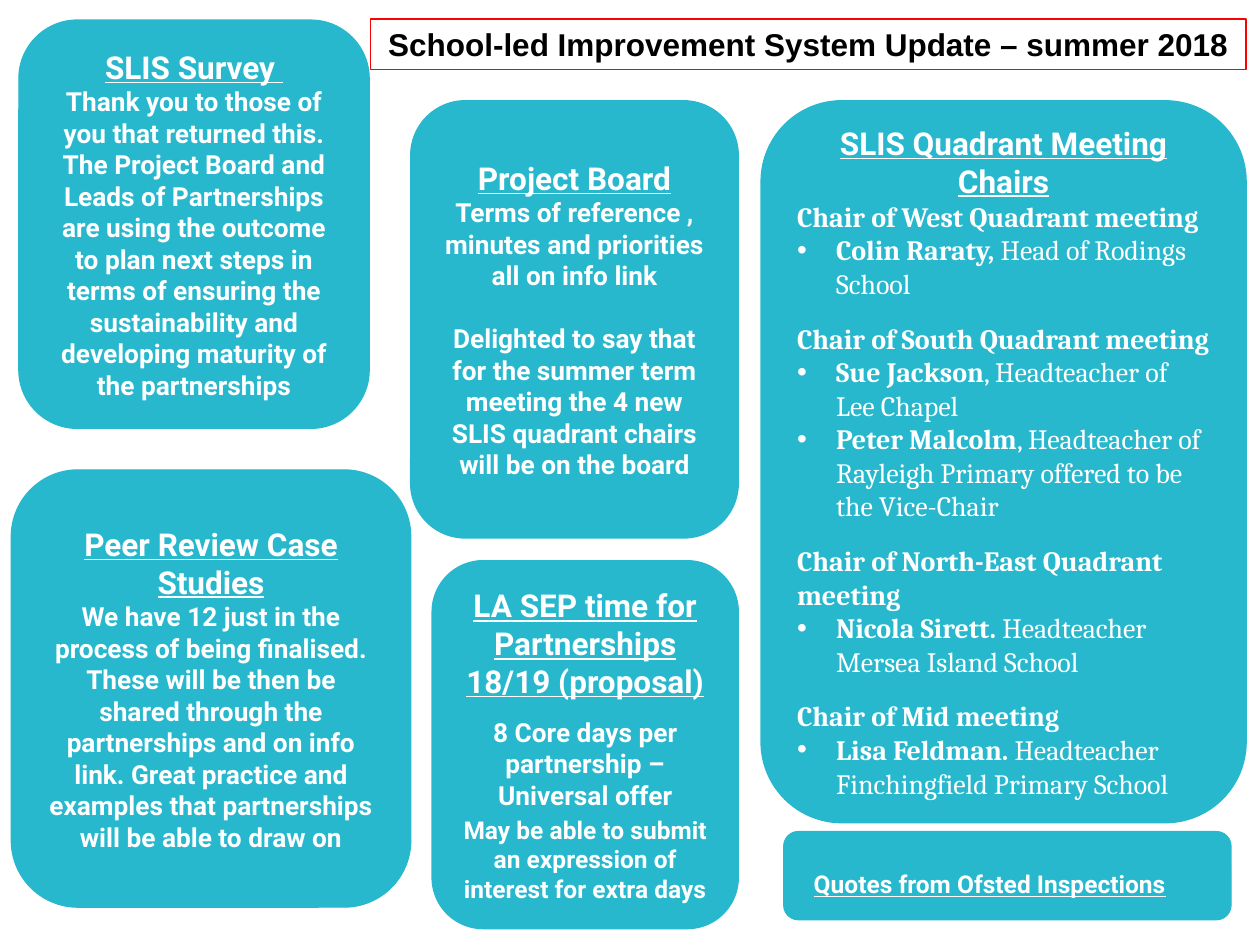
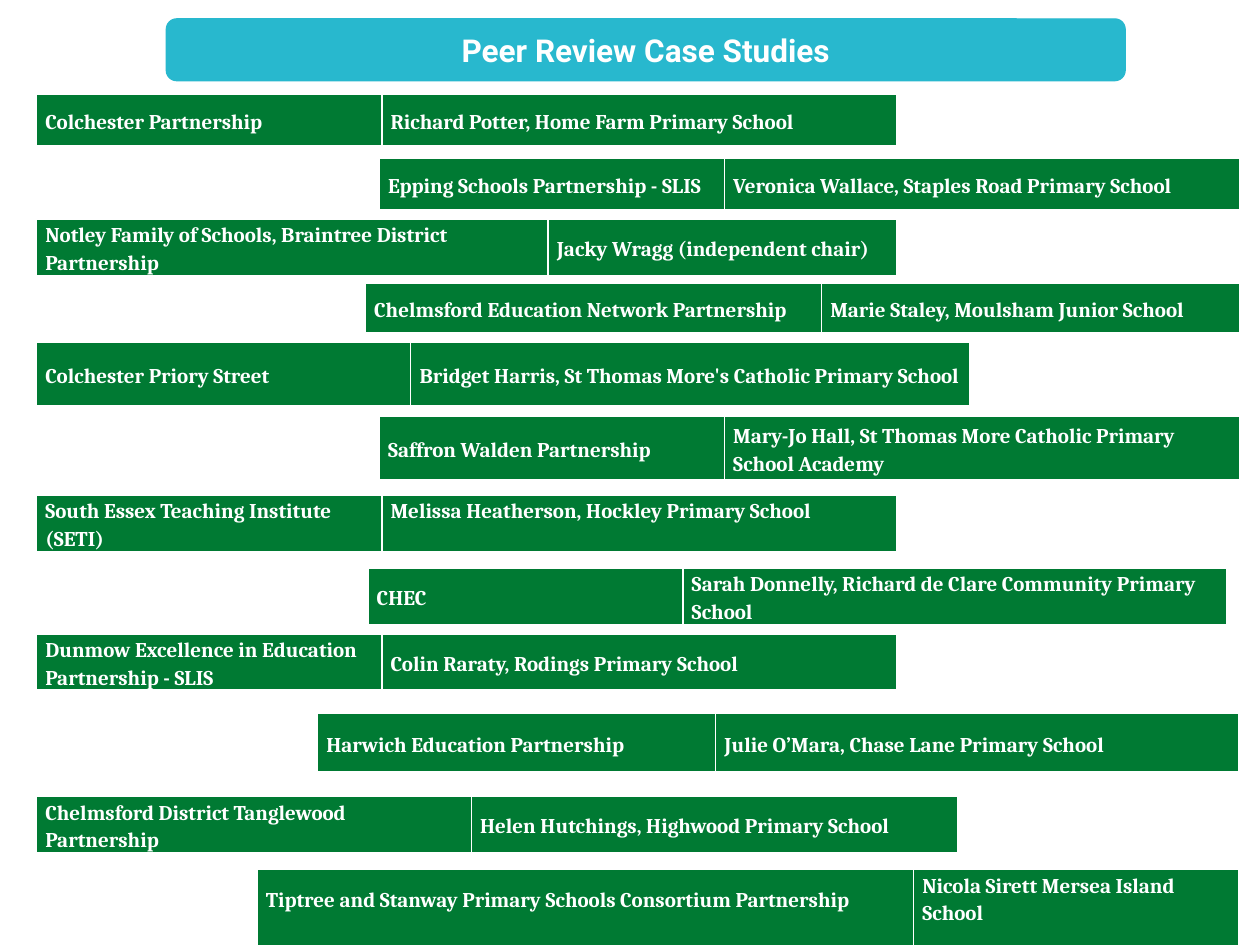
import dataclasses

import lxml.etree
import pptx
import pptx.dml.color
import pptx.enum.shapes
import pptx.enum.text
import pptx.oxml.ns
import pptx.util

Inches, Pt = pptx.util.Inches, pptx.util.Pt
RGB = pptx.dml.color.RGBColor.from_string
ALIGN, ANCHOR = pptx.enum.text.PP_ALIGN, pptx.enum.text.MSO_ANCHOR
qn = pptx.oxml.ns.qn


@dataclasses.dataclass(frozen=True)
class Theme:
    teal: str = "28B8CE"
    green: str = "007A33"
    red: str = "FF0000"
    black: str = "000000"
    white: str = "FFFFFF"
    sans: str = "Roboto"
    serif: str = "Cambria"
    plain: str = "Arial"
    head: int = 18
    chair: int = 16
    body: int = 15
    small: int = 14
    cell: int = 12


theme = Theme()


def ink(para, face, size, color=theme.white, under=False):
    """Format every run of a paragraph in bold."""
    for run in para.runs:
        font = run.font
        font.name, font.size, font.bold = face, Pt(size), True
        font.underline = under
        font.color.rgb = RGB(color)


def panel(slide, place):
    """Add a teal rounded panel."""
    kind = pptx.enum.shapes.MSO_SHAPE.ROUNDED_RECTANGLE
    shape = slide.shapes.add_shape(kind, *map(Inches, place))
    shape.shadow.inherit = False
    shape.fill.solid()
    shape.fill.fore_color.rgb = RGB(theme.teal)
    shape.line.color.rgb = RGB(theme.teal)
    shape.line.width = Pt(0.75)
    shape.text_frame.vertical_anchor = ANCHOR.MIDDLE
    return shape


deck = pptx.Presentation()
deck.slide_width, deck.slide_height = Inches(10), Inches(7.5)
layout = deck.slide_layouts.get_by_name("Title Only")

# Both slides: title
heads = [
    ("School-led Improvement System Update – summer 2018",
     (2.94, 0.15, 6.95, 0.4), theme.plain, theme.black),
    ("Peer Review Case Studies",
     (1.32, 0.15, 7.61, 0.49), theme.sans, theme.white),
]
slides = []
for text, place, face, color in heads:
    slide = deck.slides.add_slide(layout)
    title = slide.shapes.title
    title.left, title.top, title.width, title.height = map(Inches, place)
    frame = title.text_frame
    frame.text = text
    frame.auto_size = pptx.enum.text.MSO_AUTO_SIZE.NONE
    frame.vertical_anchor = ANCHOR.MIDDLE
    frame.paragraphs[0].alignment = ALIGN.CENTER
    ink(frame.paragraphs[0], face, theme.head, color)
    slides.append(slide)
news, cases = slides
news.shapes.title.line.color.rgb = RGB(theme.red)
news.shapes.title.line.width = Pt(0.75)
band = panel(cases, heads[1][1])
cases.shapes.title.element.addprevious(band.element)

# Update slide: panels, each with a heading and (text, size, gap) notes
notes = [
    ((0.15, 0.16, 2.78, 3.24), "SLIS Survey ", [
        ("Thank you to those of you that returned this. The Project Board and "
         "Leads of Partnerships are using the outcome to plan next steps in "
         "terms of ensuring the sustainability and developing maturity of the "
         "partnerships", theme.body, 0)]),
    ((3.26, 0.8, 2.6, 3.47), "Project Board", [
        ("Terms of reference , minutes and priorities all on info link",
         theme.body, 0),
        ("Delighted to say that for the summer term meeting the 4 new SLIS "
         "quadrant chairs will be on the board", theme.body, 18)]),
    ((0.09, 3.73, 3.17, 3.47), "Peer Review Case Studies", [
        ("We have 12 just in the process of being finalised. These will be "
         "then be shared through the partnerships and on info link. Great "
         "practice and examples that partnerships will be able to draw on",
         theme.body, 0)]),
    ((3.43, 4.45, 2.43, 2.92), "LA SEP time for Partnerships 18/19 (proposal)", [
        ("8 Core days per partnership –Universal offer", theme.body, 9.4),
        ("May be able to submit an expression of interest for extra days",
         theme.small, 2.4)]),
    ((6.04, 0.8, 3.85, 5.73), "SLIS Quadrant Meeting Chairs", []),
]
for place, head, lines in notes:
    frame = panel(news, place).text_frame
    frame.text = head
    frame.paragraphs[0].alignment = ALIGN.CENTER
    ink(frame.paragraphs[0], theme.sans, theme.head, under=True)
    for text, size, gap in lines:
        para = frame.add_paragraph()
        para.text = text
        para.alignment = ALIGN.CENTER
        para.space_before = Pt(gap)
        ink(para, theme.sans, size)

# The last panel also lists the chairs of each quadrant
chairs = [
    ("West Quadrant", [("Colin Raraty, ", "Head of Rodings School")]),
    ("South Quadrant", [
        ("Sue Jackson", ", Headteacher of Lee Chapel"),
        ("Peter Malcolm",
         ", Headteacher of Rayleigh Primary offered to be the Vice-Chair")]),
    ("North-East Quadrant",
     [("Nicola Sirett. ", "Headteacher Mersea Island School")]),
    ("Mid", [("Lisa Feldman. ", "Headteacher Finchingfield Primary School")]),
]
for spot, (area, people) in enumerate(chairs):
    para = frame.add_paragraph()
    para.text = f"Chair of {area} meeting"
    para.alignment = ALIGN.LEFT
    para.space_before = Pt(12 if spot else 0)
    ink(para, theme.serif, theme.chair)
    for name, role in people:
        para = frame.add_paragraph()
        para.alignment = ALIGN.LEFT
        for text in (name, role):
            para.add_run().text = text
        ink(para, theme.serif, theme.chair)
        para.runs[1].font.bold = False
        props = para._p.get_or_add_pPr()
        props.set("marL", str(Inches(0.31)))
        props.set("indent", str(-Inches(0.31)))
        lxml.etree.SubElement(props, qn("a:buFont")).set("typeface", theme.plain)
        lxml.etree.SubElement(props, qn("a:buChar")).set("char", "•")

panel(news, (6.22, 6.6, 3.55, 0.7))
quote = news.shapes.add_textbox(*map(Inches, (6.36, 6.85, 3.28, 0.34)))
quote.text_frame.word_wrap = True
quote.text_frame.text = "Quotes from Ofsted Inspections"
ink(quote.text_frame.paragraphs[0], theme.sans, theme.small, under=True)

# Case slide: left, top, height, column widths, (partnership, lead), bottom pads
near, far = 0.29, 3.01
half = (2.74, 4.09)
level, lift = (0, 0), 0.23
rows = [
    (near, 0.75, 0.42, half,
     ("Colchester Partnership", "Richard Potter, Home Farm Primary School"), level),
    (far, 1.26, 0.42, half,
     ("Epping Schools Partnership - SLIS",
      "Veronica Wallace, Staples Road Primary School"), level),
    (near, 1.74, 0.46, (4.06, 2.77),
     ("Notley Family of Schools, Braintree District Partnership",
      "Jacky Wragg (independent chair)"), level),
    (2.9, 2.25, 0.4, (3.62, 3.32),
     ("Chelmsford Education Network Partnership",
      "Marie Staley, Moulsham Junior School"), level),
    (near, 2.72, 0.51, (2.97, 4.44),
     ("Colchester Priory Street",
      "Bridget Harris, St Thomas More's Catholic Primary School"), level),
    (far, 3.3, 0.52, half,
     ("Saffron Walden Partnership",
      "Mary-Jo Hall, St Thomas More Catholic Primary School Academy"), level),
    (near, 3.93, 0.46, half,
     ("South Essex Teaching Institute (SETI)",
      "Melissa Heatherson, Hockley Primary School"), (0, lift)),
    (2.92, 4.51, 0.46, (2.5, 4.32),
     ("CHEC", "Sarah Donnelly, Richard de Clare Community Primary School"), level),
    (near, 5.03, 0.46, half,
     ("Dunmow Excellence in Education Partnership - SLIS",
      "Colin Raraty, Rodings Primary School"), level),
    (2.52, 5.66, 0.48, (3.16, 4.15),
     ("Harwich Education Partnership",
      "Julie O’Mara, Chase Lane Primary School"), level),
    (near, 6.32, 0.46, (3.45, 3.86),
     ("Chelmsford District Tanglewood Partnership",
      "Helen Hutchings, Highwood Primary School"), level),
    (2.04, 6.9, 0.69, (5.21, 2.58),
     ("Tiptree and Stanway Primary Schools Consortium Partnership",
      "Nicola Sirett Mersea Island School"), (lift, lift)),
]
edges = {"a:lnL": 1, "a:lnR": 1, "a:lnT": 1, "a:lnB": 3}
for left, top, height, widths, names, pads in rows:
    size = map(Inches, (left, top, sum(widths), height))
    table = cases.shapes.add_table(1, 2, *size).table
    table.first_row = table.horz_banding = False
    table.rows[0].height = Inches(height)
    for col, (width, name, pad) in enumerate(zip(widths, names, pads)):
        table.columns[col].width = Inches(width)
        cell = table.cell(0, col)
        cell.text_frame.text = name
        para = cell.text_frame.paragraphs[0]
        para.line_spacing = 1.15
        ink(para, theme.serif, theme.cell)
        cell.vertical_anchor = ANCHOR.MIDDLE
        cell.margin_left = cell.margin_right = Inches(0.07)
        cell.margin_top, cell.margin_bottom = 0, Inches(pad)
        props = cell._tc.get_or_add_tcPr()
        for edge, weight in edges.items():
            line = lxml.etree.SubElement(props, qn(edge), w=str(Pt(weight)))
            fill = lxml.etree.SubElement(line, qn("a:solidFill"))
            lxml.etree.SubElement(fill, qn("a:srgbClr"), val=theme.white)
        cell.fill.solid()
        cell.fill.fore_color.rgb = RGB(theme.green)

deck.save("out.pptx")
